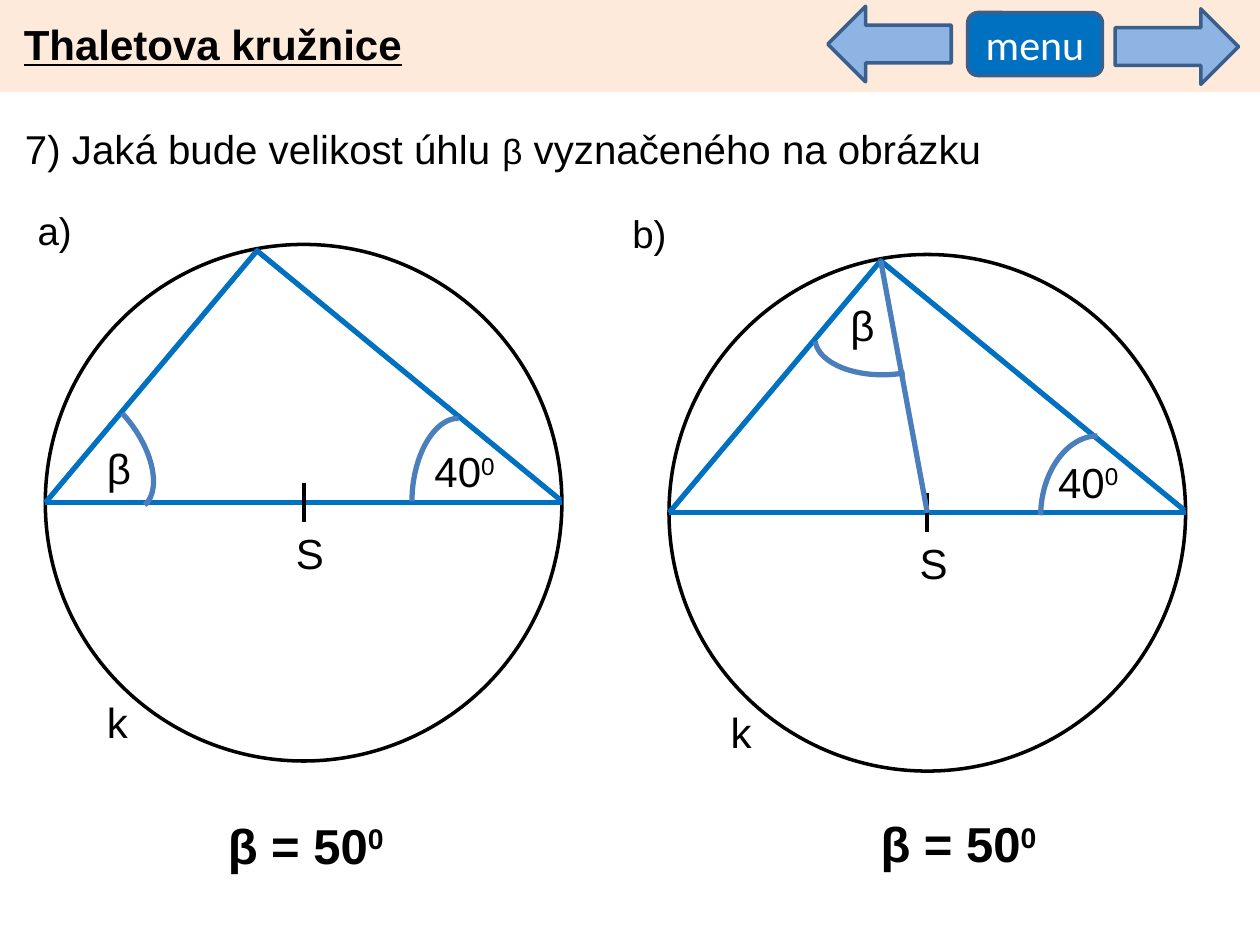
"""Build the Thales circle exercise slide with two angle problems."""
import pptx
import pptx.util
import pptx.dml.color
import pptx.enum.shapes
import pptx.enum.text
import pptx.oxml
import pptx.oxml.ns

Inches = pptx.util.Inches
Shape = pptx.enum.shapes.MSO_SHAPE

COLORS = {
    "band": "FDEADA", "arrow": "8EB4E3", "arrow_edge": "3A5F8C",
    "side": "0070C0", "angle": "4B7EBC", "ink": "000000", "white": "FFFFFF",
}
TITLE = "Thaletova kružnice"
QUESTION = [("7) Jaká bude velikost úhlu ", 23), ("β", 20), (" vyznačeného na obrázku", 23)]
DIAMETER = 4.1
RADIUS = DIAMETER / 2
APEX = (1.68, 0.05)
PANELS = [
    {
        "label": "a)", "label_at": (0.2, 1.59), "circle": (0.36, 1.94),
        "beta": (0.75, 3.46), "answer": (1.71, 6.42), "radius_drawn": False,
        "arcs": [
            [(3.27, 3.98), (3.27, 3.63), (3.44, 3.32), (3.64, 3.32)],
            [(0.97, 3.28), (1.21, 3.54), (1.29, 3.88), (1.15, 4.01)],
        ],
    },
    {
        "label": "b)", "label_at": (4.92, 1.62), "circle": (5.31, 2.02),
        "beta": (6.65, 2.33), "answer": (6.89, 6.41), "radius_drawn": True,
        "arcs": [
            [(8.26, 4.09), (8.26, 3.75), (8.47, 3.46), (8.71, 3.46)],
            [(7.18, 2.96), (6.84, 3.02), (6.5, 2.9), (6.47, 2.71)],
        ],
    },
]
NAV_ARROWS = [(6.57, 0.05, True), (8.85, 0.07, False)]
ARC_STEPS = 24

deck = pptx.Presentation()
deck.slide_width, deck.slide_height = Inches(10), Inches(7.5)
slide = deck.slides.add_slide(deck.slide_layouts[6])


def rgb(name):
    return pptx.dml.color.RGBColor.from_string(COLORS[name])


def style(shape, fill=None, line=None, width=2):
    shape.shadow.inherit = False
    if fill:
        shape.fill.solid()
        shape.fill.fore_color.rgb = rgb(fill)
    else:
        shape.fill.background()
    if line:
        shape.line.color.rgb = rgb(line)
        shape.line.width = pptx.util.Pt(width)
    else:
        shape.line.fill.background()


def add_preset(kind, box, **look):
    shape = slide.shapes.add_shape(kind, *map(Inches, box))
    style(shape, **look)
    return shape


def add_run(paragraph, text, size, font="Arial", color="ink", bold=False):
    run = paragraph.add_run()
    run.text = text
    run.font.size = pptx.util.Pt(size)
    run.font.name = font
    run.font.bold = bold
    run.font.color.rgb = rgb(color)
    return run


def add_text(at, size, runs, bold=False, exponent=None):
    box = slide.shapes.add_textbox(*map(Inches, at + size))
    box.text_frame.word_wrap = True
    box.text_frame.auto_size = pptx.enum.text.MSO_AUTO_SIZE.SHAPE_TO_FIT_TEXT
    paragraph = box.text_frame.paragraphs[0]
    added = [add_run(paragraph, text, points, bold=bold) for text, points in runs]
    if exponent:
        power = add_run(paragraph, exponent, runs[-1][1], bold=bold)
        power.font._element.set("baseline", "30000")
    return added


def add_line(start, end, color, width):
    line = slide.shapes.add_connector(
        pptx.enum.shapes.MSO_CONNECTOR.STRAIGHT, *map(Inches, start + end))
    line.line.color.rgb = rgb(color)
    line.line.width = pptx.util.Pt(width)
    line._element.spPr.append(pptx.oxml.parse_xml(
        "<a:effectLst %s/>" % pptx.oxml.ns.nsdecls("a")))


def add_outline(points, color):
    corners = [(Inches(x), Inches(y)) for x, y in points]
    builder = slide.shapes.build_freeform(*corners[0], scale=1.0)
    builder.add_line_segments(corners[1:], close=False)
    style(builder.convert_to_shape(), line=color, width=3)


def curve_points(controls):
    for step in range(ARC_STEPS + 1):
        t = step / ARC_STEPS
        weights = ((1 - t) ** 3, 3 * t * (1 - t) ** 2, 3 * t ** 2 * (1 - t), t ** 3)
        yield tuple(sum(w * c[axis] for w, c in zip(weights, controls)) for axis in (0, 1))


def add_panel(panel):
    left, top = panel["circle"]

    def place(x, y):
        return left + x, top + y

    center = place(RADIUS, RADIUS)
    add_preset(Shape.OVAL, (left, top, DIAMETER, DIAMETER), line="ink")
    add_line(place(0, RADIUS), place(DIAMETER, RADIUS), "side", 3)
    add_line(place(RADIUS, 1.89), place(RADIUS, 2.2), "ink", 2.25)
    add_outline([place(0, RADIUS), place(*APEX), place(4.09, 2.03)], "side")
    for arc in panel["arcs"]:
        add_outline(list(curve_points(arc)), "angle")
    if panel["radius_drawn"]:
        add_line(center, place(*APEX), "angle", 3)
    letters = [("S", place(1.89, 2.2)), ("k", place(0.39, 3.54)), ("β", panel["beta"])]
    for letter, at in letters:
        add_text(at, (0.63, 0.51), [(letter, 24)])
    add_text(place(2.99, 1.55), (0.94, 0.51), [("40", 24)], exponent="0")
    add_text(panel["answer"], (2.33, 0.57), [("β = 50", 28)], bold=True, exponent="0")
    add_text(panel["label_at"], (0.63, 0.47), [(panel["label"], 22)])


def add_header():
    add_preset(Shape.RECTANGLE, (0, 0, 10, 0.73), fill="band")
    for left, top, flipped in NAV_ARROWS:
        arrow = add_preset(Shape.RIGHT_ARROW, (left, top, 0.98, 0.6),
                           fill="arrow", line="arrow_edge")
        if flipped:
            arrow._element.spPr.xfrm.set("flipH", "1")
    title_run, = add_text((0.09, 0.1), (9.32, 0.5), [(TITLE, 24)], bold=True)
    title_run.font.underline = True
    menu = add_preset(Shape.ROUNDED_RECTANGLE, (7.68, 0.1, 1.07, 0.5),
                      fill="side", line="arrow_edge")
    menu.text_frame.vertical_anchor = pptx.enum.text.MSO_ANCHOR.MIDDLE
    paragraph = menu.text_frame.paragraphs[0]
    paragraph.alignment = pptx.enum.text.PP_ALIGN.CENTER
    add_run(paragraph, "menu", 24, font="Calibri", color="white")


add_header()
add_text((0.1, 0.94), (9.9, 0.49), QUESTION)
for panel in PANELS:
    add_panel(panel)
deck.save("out.pptx")
